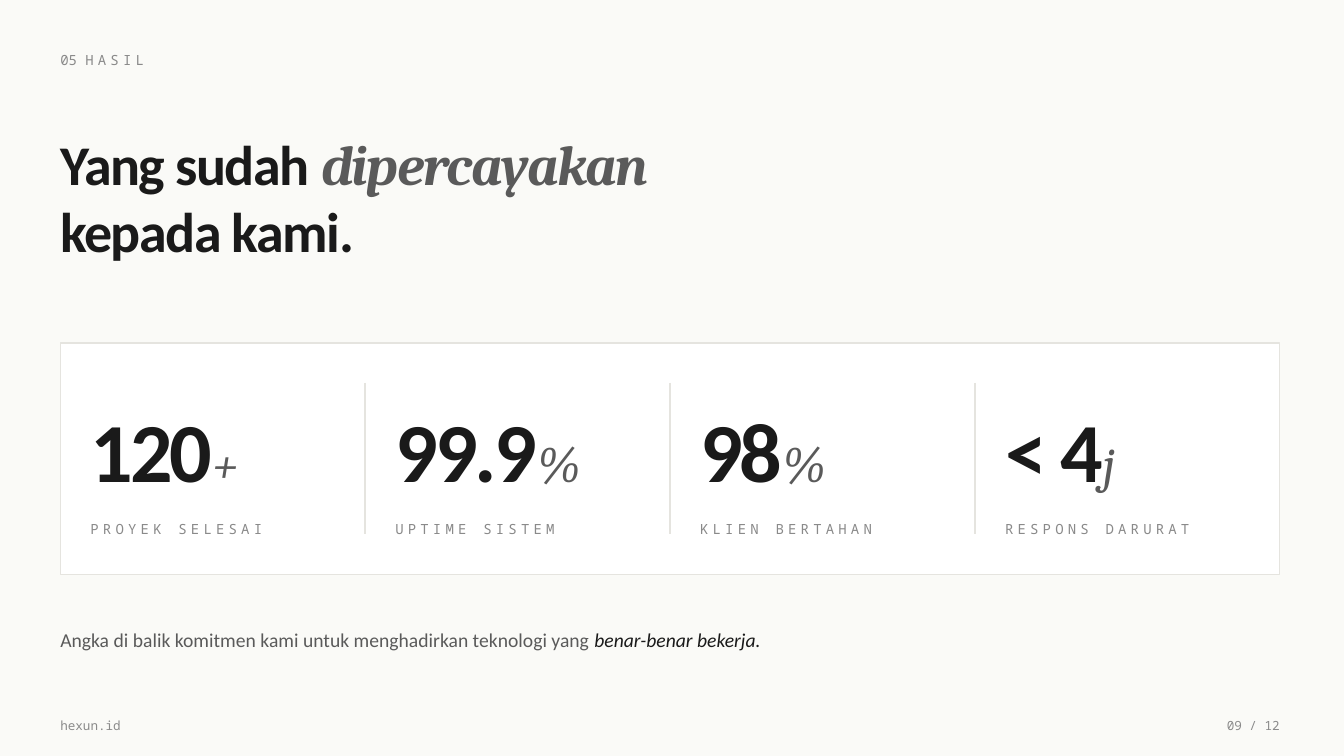
from pptx import Presentation
from pptx.dml.color import RGBColor
from pptx.enum.shapes import MSO_CONNECTOR, MSO_SHAPE
from pptx.enum.text import MSO_ANCHOR, PP_ALIGN
from pptx.oxml.ns import qn
from pptx.util import Cm, Pt
from lxml.etree import SubElement

COLORS = {"paper": "FAFAF7", "ink": "1A1A1A", "gray": "5A5A5A",
          "muted": "8A8A8A", "rule": "E5E4DF", "card": "FFFFFF"}
RGB = {name: RGBColor.from_string(code) for name, code in COLORS.items()}

MONO = {"name": "Noto Sans Mono", "size": Pt(10), "color": "muted"}
LABEL = {**MONO, "spacing": 3}
FOOTER = {**MONO, "size": Pt(9)}
TITLE = {"name": "Calibri", "size": Pt(40), "color": "ink", "bold": True, "spacing": -1}
TITLE_ACCENT = {**TITLE, "name": "Cambria", "color": "gray", "italic": True}
FIGURE = {**TITLE, "size": Pt(60), "spacing": -2}
UNIT = {**TITLE_ACCENT, "size": Pt(36), "bold": False, "spacing": -2}
BODY = {"name": "Calibri", "size": Pt(14), "color": "gray"}
BODY_ACCENT = {**BODY, "color": "ink", "italic": True}


def add_text(left, top, width, height, paragraphs,
             anchor=MSO_ANCHOR.MIDDLE, align=PP_ALIGN.LEFT):
    """Add a text box; each paragraph is a list of (text, format) runs."""
    tf = s.shapes.add_textbox(Cm(left), Cm(top), Cm(width), Cm(height)).text_frame
    tf.word_wrap = True
    tf.vertical_anchor = anchor
    for side in ("left", "top", "right", "bottom"):
        setattr(tf, f"margin_{side}", 0)
    for i, runs in enumerate(paragraphs):
        p = tf.add_paragraph() if i else tf.paragraphs[0]
        p.alignment = align
        for text, style in runs:
            r = p.add_run()
            r.text = text
            for key, value in style.items():
                if key == "color":
                    r.font.color.rgb = RGB[value]
                elif key == "spacing":
                    r._r.get_or_add_rPr().set("spc", str(value * 100))
                else:
                    setattr(r.font, key, value)


prs = Presentation()
prs.slide_width, prs.slide_height = Cm(33.87), Cm(19.05)
s = prs.slides.add_slide(prs.slide_layouts[6])
s.background.fill.solid()
s.background.fill.fore_color.rgb = RGB["paper"]

# Heading
MARGIN = 1.52
add_text(MARGIN, 1.14, 20.32, 0.76, [[("05 ", MONO), ("HASIL", LABEL)]])
add_text(MARGIN, 2.54, 27.94, 4.83, [
    [("Yang sudah ", TITLE), ("dipercayakan", TITLE_ACCENT)],
    [("kepada kami.", TITLE)],
])

# Card with the four results
CARD_WIDTH = 30.73
card = s.shapes.add_shape(MSO_SHAPE.RECTANGLE, Cm(MARGIN), Cm(8.64), Cm(CARD_WIDTH), Cm(5.84))
card.shadow.inherit = False
card.fill.solid()
card.fill.fore_color.rgb = RGB["card"]
card.line.color.rgb = RGB["rule"]
card.line.width = Pt(1)

results = [
    ("120", "+", "PROYEK SELESAI"),
    ("99.9", "%", "UPTIME SISTEM"),
    ("98", "%", "KLIEN BERTAHAN"),
    ("< 4", "j", "RESPONS DARURAT"),
]
column = CARD_WIDTH / len(results)
for i, (figure, unit, label) in enumerate(results):
    x = MARGIN + i * column
    if i:
        divider = s.shapes.add_connector(MSO_CONNECTOR.STRAIGHT, Cm(x), Cm(9.65), Cm(x), Cm(13.46))
        divider.line.color.rgb = RGB["rule"]
        divider.line.width = Pt(1.5)
        SubElement(divider._element.spPr, qn("a:effectLst"))
    add_text(x + 0.76, 10.03, 6.65, 2.79, [[(figure, FIGURE), (unit, UNIT)]], MSO_ANCHOR.TOP)
    add_text(x + 0.76, 12.95, 6.65, 0.76, [[(label, LABEL)]])

# Closing line and footer
add_text(MARGIN, 15.49, 25.4, 1.27, [[
    ("Angka di balik komitmen kami untuk menghadirkan teknologi yang ", BODY),
    ("benar-benar bekerja.", BODY_ACCENT),
]])
add_text(MARGIN, 17.91, 5.08, 0.76, [[("hexun.id", FOOTER)]])
add_text(30.22, 17.91, 2.03, 0.76, [[("09 / 12", FOOTER)]], align=PP_ALIGN.RIGHT)

prs.save("out.pptx")
